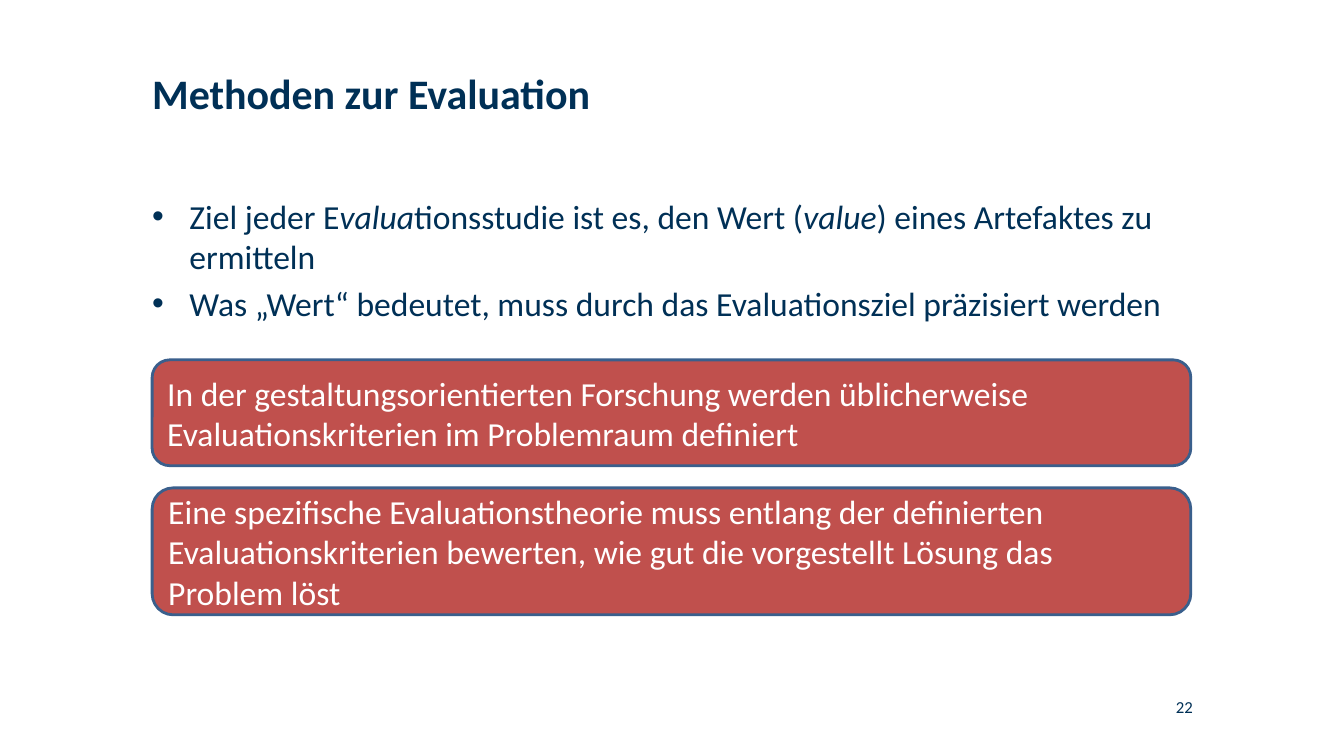
from dataclasses import dataclass

from lxml import etree
from pptx import Presentation
from pptx.dml.color import RGBColor
from pptx.enum.shapes import MSO_SHAPE
from pptx.enum.text import MSO_ANCHOR, PP_ALIGN
from pptx.oxml.ns import qn
from pptx.util import Pt

ROUND_RECT = MSO_SHAPE.ROUNDED_RECTANGLE
TOP, MIDDLE = MSO_ANCHOR.TOP, MSO_ANCHOR.MIDDLE
LEFT, RIGHT = PP_ALIGN.LEFT, PP_ALIGN.RIGHT
EMU_PER_PX = 9144
MARGIN, CONTENT_W = 151, 1031


@dataclass(frozen=True)
class Theme:
    font: str = "Calibri"
    navy: str = "003056"
    white: str = "FFFFFF"
    red: str = "C0504D"
    border: str = "3A5F8C"
    title: int = 30
    body: int = 24
    number: int = 12


THEME = Theme()


def px(n):
    return n * EMU_PER_PX


def box(*lengths):
    return [px(n) for n in lengths]


def rgb(value):
    return RGBColor.from_string(value)


def write(p, text, size=THEME.body, color=THEME.navy, bold=False,
          italic=False, align=LEFT):
    p.alignment = align
    r = p.add_run()
    r.text = text
    f = r.font
    f.name, f.size, f.bold, f.italic = THEME.font, Pt(size), bold, italic
    f.color.rgb = rgb(color)


def add_frame(s, x, y, w, h):
    tf = s.shapes.add_textbox(*box(x, y, w, h)).text_frame
    tf.word_wrap = True
    tf.vertical_anchor = TOP
    tf.margin_left = tf.margin_right = tf.margin_top = tf.margin_bottom = 0
    return tf


def add_label(s, x, y, w, h, text, **fmt):
    write(add_frame(s, x, y, w, h).paragraphs[0], text, **fmt)


def add_bullets(s, x, y, w, h, items, indent=37):
    tf = add_frame(s, x, y, w, h)
    for i, runs in enumerate(items):
        p = tf.add_paragraph() if i else tf.paragraphs[0]
        p.space_before = Pt(THEME.body * 0.2)
        for text, italic in runs:
            write(p, text, italic=italic)
        pPr = p._p.get_or_add_pPr()
        pPr.set("marL", str(px(indent)))
        pPr.set("indent", str(-px(indent)))
        etree.SubElement(pPr, qn("a:buFont")).set("typeface", "Arial")
        etree.SubElement(pPr, qn("a:buChar")).set("char", "•")


def add_callout(s, x, y, w, h, text):
    sp = s.shapes.add_shape(ROUND_RECT, *box(x, y, w, h))
    sp.shadow.inherit = False
    sp.fill.solid()
    sp.fill.fore_color.rgb = rgb(THEME.red)
    sp.line.color.rgb = rgb(THEME.border)
    sp.line.width = Pt(2)
    tf = sp.text_frame
    tf.word_wrap = True
    tf.vertical_anchor = MIDDLE
    write(tf.paragraphs[0], text, color=THEME.white)


def main():
    prs = Presentation()
    prs.slide_width, prs.slide_height = box(1334, 750)
    s = prs.slides.add_slide(prs.slide_layouts[6])

    add_label(s, MARGIN, 67, 706, 137, "Methoden zur Evaluation",
              size=THEME.title, bold=True)
    add_bullets(s, MARGIN, 194, CONTENT_W, 137, [
        [("Ziel jeder E", False), ("valua", True),
         ("tionsstudie ist es, den Wert (", False), ("value", True),
         (") eines Artefaktes zu ermitteln", False)],
        [("Was „Wert“ bedeutet, muss durch das Evaluationsziel "
          "präzisiert werden", False)],
    ])
    add_label(s, 1030, 691, 154, 20, "22", size=THEME.number, align=RIGHT)
    add_callout(s, MARGIN, 357, CONTENT_W, 105,
                "In der gestaltungsorientierten Forschung werden "
                "üblicherweise Evaluationskriterien im Problemraum definiert")
    add_callout(s, MARGIN, 484, CONTENT_W, 126,
                "Eine spezifische Evaluationstheorie muss entlang der "
                "definierten Evaluationskriterien bewerten, wie gut die "
                "vorgestellt Lösung das Problem löst")
    prs.save("out.pptx")


if __name__ == "__main__":
    main()
